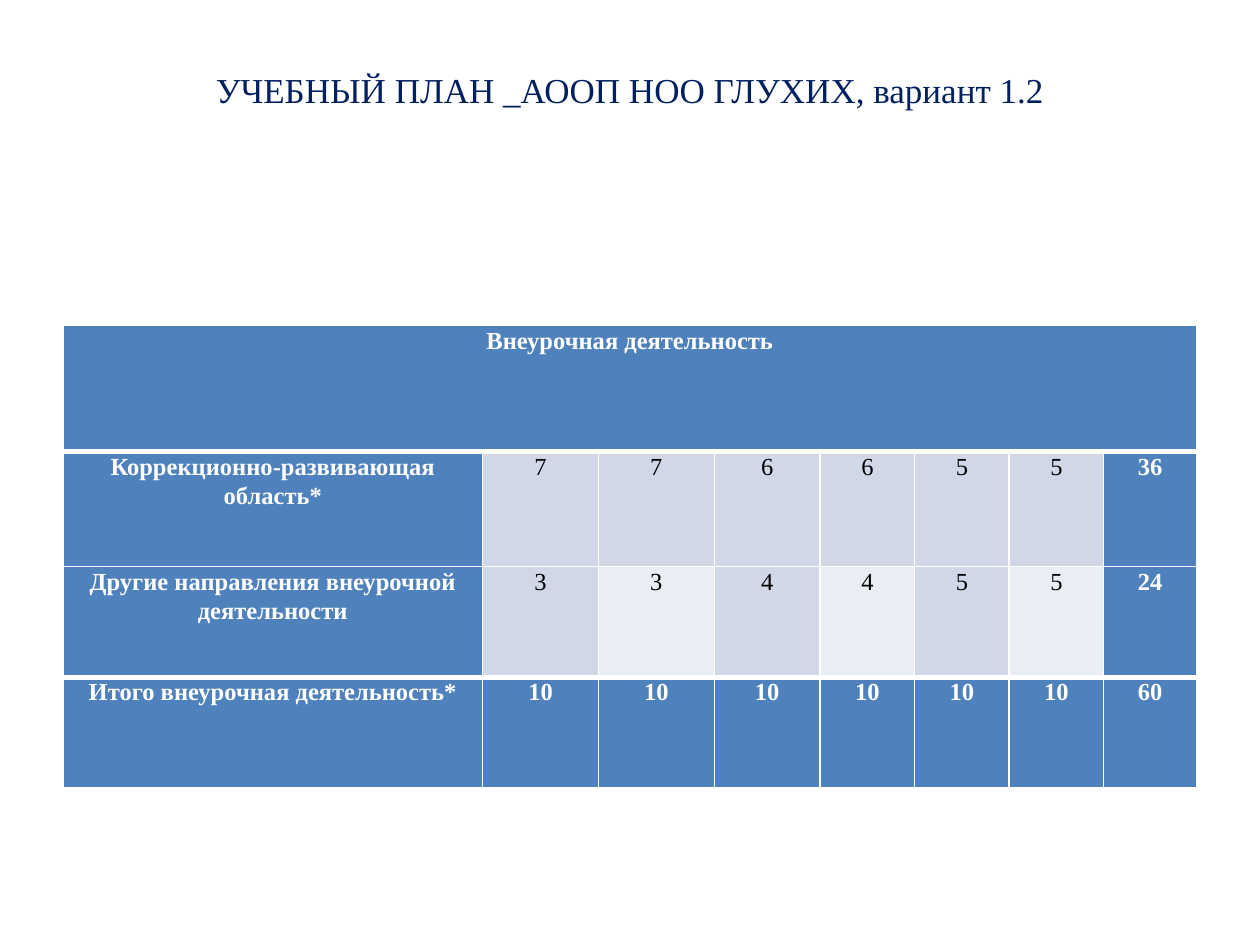
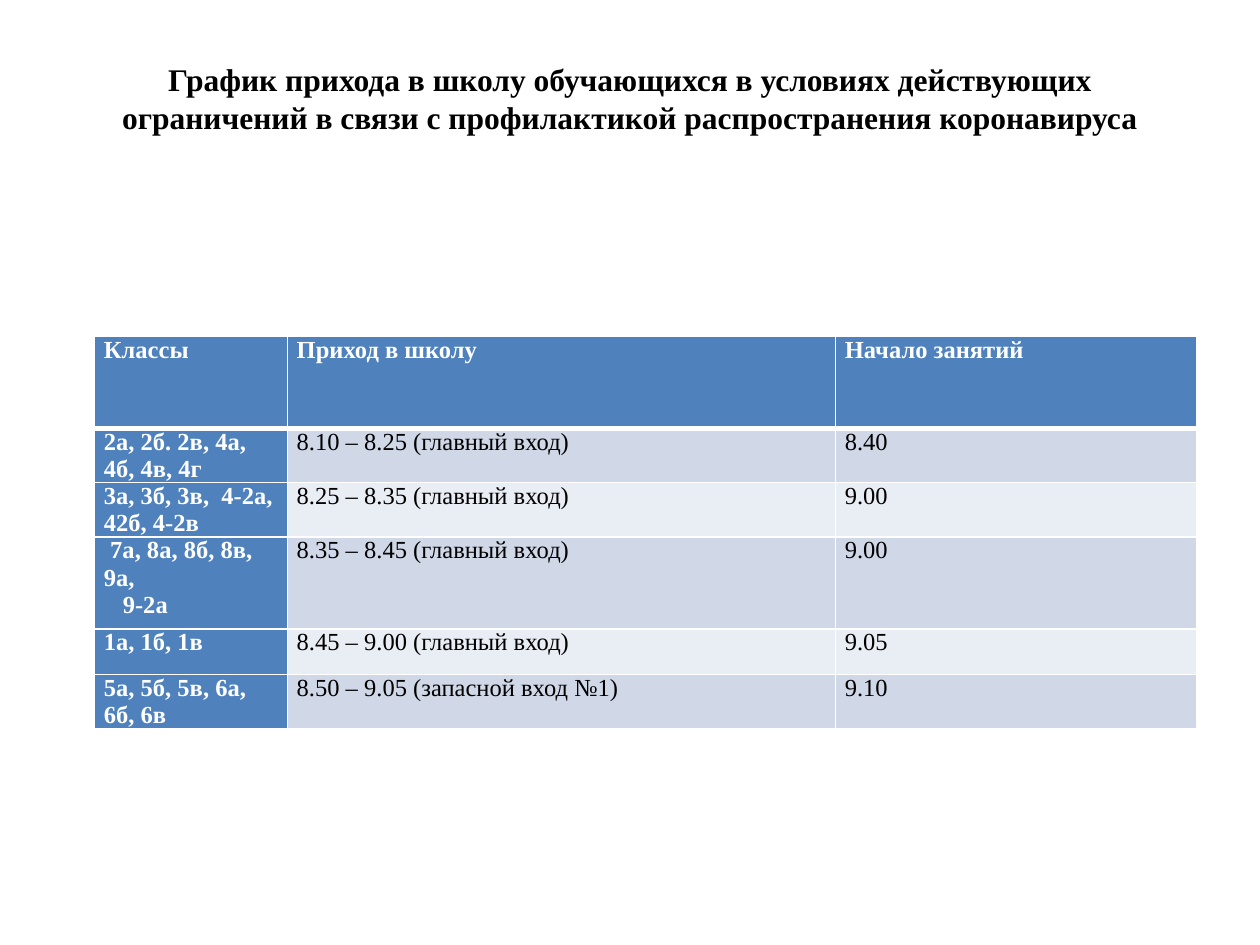
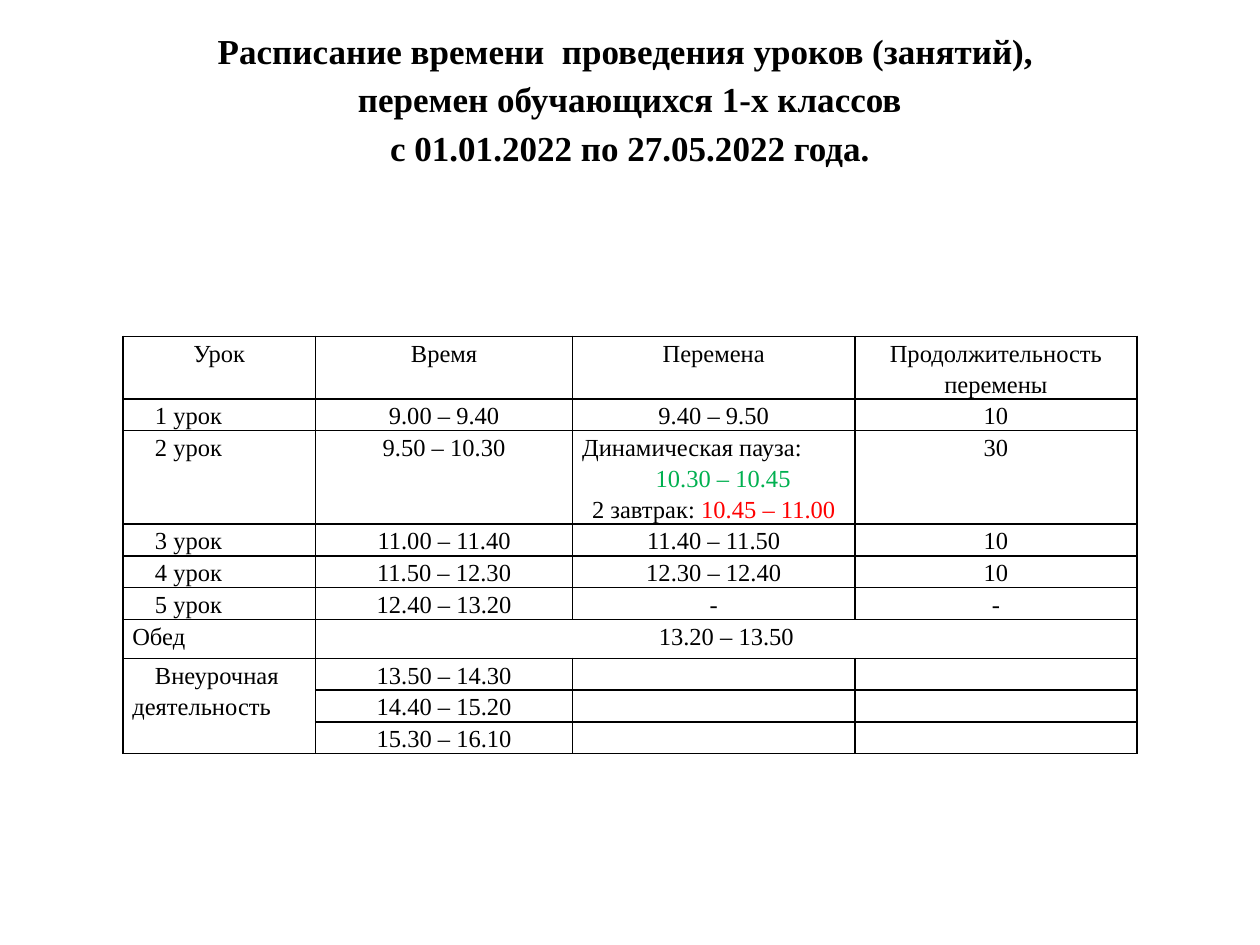
from lxml.etree import SubElement
from pptx import Presentation
from pptx.dml.color import RGBColor
from pptx.enum.text import MSO_ANCHOR as Anchor, PP_ALIGN as Align
from pptx.oxml.ns import qn
from pptx.util import Inches, Pt

WHITE = RGBColor(0xFF, 0xFF, 0xFF)
BLACK = RGBColor(0x00, 0x00, 0x00)
NAVY = RGBColor(0x00, 0x20, 0x60)
BLUE = RGBColor(0x4F, 0x81, 0xBD)
BAND = RGBColor(0xD0, 0xD8, 0xE8)
PALE = RGBColor(0xE9, 0xED, 0xF4)
GREEN = RGBColor(0x00, 0xB0, 0x50)
RED = RGBColor(0xFF, 0x00, 0x00)

FONT = "Times New Roman"
GRID_COLUMNS, GRID_ROWS = 100, 75


def indent_first_line(paragraph, indent):
    properties = paragraph._p.get_or_add_pPr()
    properties.set("marL", "0")
    properties.set("indent", str(indent))


def write(paragraph, text, size=14, color=BLACK, bold=False,
          align=Align.LEFT, spacing=1.0, indent=0):
    paragraph.alignment = align
    paragraph.line_spacing = spacing
    if indent:
        indent_first_line(paragraph, indent)
    if not text:
        paragraph._p.get_or_add_endParaRPr().set("sz", str(size * 100))
        return
    run = paragraph.add_run()
    run.text = text
    run.font.name = FONT
    run.font.size = Pt(size)
    run.font.bold = bold
    run.font.color.rgb = color


class Deck:
    def __init__(self):
        self.presentation = Presentation()
        self.presentation.slide_width = Inches(10)
        self.presentation.slide_height = Inches(7.5)
        self.slide = None

    def across(self, columns):
        return round(self.presentation.slide_width * columns / GRID_COLUMNS)

    def down(self, rows):
        return round(self.presentation.slide_height * rows / GRID_ROWS)

    def new_slide(self):
        layout = self.presentation.slide_layouts[6]
        self.slide = self.presentation.slides.add_slide(layout)

    def title(self, text, top=3, bottom_inset=0.5, **text_format):
        box = self.slide.shapes.add_textbox(
            self.across(5), self.down(top), self.across(90), self.down(12.5))
        frame = box.text_frame
        frame.word_wrap = True
        frame.vertical_anchor = Anchor.MIDDLE
        frame.margin_bottom = self.down(bottom_inset)
        self.lines(frame, text, align=Align.CENTER, **text_format)

    def lines(self, frame, text, **text_format):
        for index, line in enumerate(text.split("\n")):
            paragraph = frame.add_paragraph() if index else frame.paragraphs[0]
            write(paragraph, line, **text_format)

    def borders(self, cell, color, top, bottom):
        properties = cell._tc.get_or_add_tcPr()
        for side, width in (("L", 1), ("R", 1), ("T", top), ("B", bottom)):
            line = SubElement(properties, qn(f"a:ln{side}"), w=str(Pt(width)))
            fill = SubElement(line, qn("a:solidFill"))
            SubElement(fill, qn("a:srgbClr"), val=str(color))

    def table(self, left, top, widths, heights, rows, cell_style,
              line_color=WHITE, thick_edges=()):
        table = self.slide.shapes.add_table(
            len(heights), len(widths), self.across(left), self.down(top),
            self.across(sum(widths)), self.down(sum(heights))).table
        table.first_row = table.horz_banding = False
        for column, width in zip(table.columns, widths):
            column.width = self.across(width)
        for row, height in zip(table.rows, heights):
            row.height = self.down(height)
        for r, texts in enumerate(rows):
            top_line, bottom_line = (3 if edge in thick_edges else 1
                                     for edge in (r, r + 1))
            for c in range(len(widths)):
                cell = table.cell(r, c)
                cell.margin_left = cell.margin_right = self.across(0.75)
                cell.margin_top = cell.margin_bottom = 0
                self.borders(cell, line_color, top_line, bottom_line)
                fill, text_format = cell_style(r, c)
                if fill is None:
                    cell.fill.background()
                else:
                    cell.fill.solid()
                    cell.fill.fore_color.rgb = fill
                text = texts[c] if c < len(texts) else ""
                self.lines(cell.text_frame, text, **text_format)
        return table


def curriculum_slide(deck):
    deck.new_slide()
    deck.title("УЧЕБНЫЙ ПЛАН _АООП НОО ГЛУХИХ, вариант 1.2",
               top=0.85, size=20, color=NAVY)
    rows = [
        ["Внеурочная деятельность"],
        ["Коррекционно-развивающая область*", *"776655", "36"],
        ["Другие направления внеурочной деятельности", *"334455", "24"],
        ["Итого внеурочная деятельность*", *["10"] * 6, "60"],
    ]

    def cell_style(r, c):
        centred = {"align": Align.CENTER, "spacing": 1.07}
        if r in (0, 3) or c in (0, 7):
            return BLUE, {"color": WHITE, "bold": True, **centred}
        return (PALE if r == 2 and c % 2 == 0 else BAND), centred

    table = deck.table(5, 25.85, [33.3, 9.2, 9.2, 8.4, 7.5, 7.5, 7.5, 7.4],
                       [10, 9.1, 8.8, 8.8], rows, cell_style,
                       thick_edges=(1, 3))
    table.cell(0, 0).merge(table.cell(0, 7))


def arrival_slide(deck):
    deck.new_slide()
    deck.title("График прихода в школу обучающихся в условиях действующих "
               "ограничений в связи с профилактикой распространения "
               "коронавируса", bottom_inset=3.4, size=18, bold=True)
    rows = [
        ["Классы", "Приход в школу", "Начало занятий"],
        ["2а, 2б. 2в, 4а, 4б, 4в, 4г", "8.10 – 8.25 (главный вход)", "8.40"],
        ["3а, 3б, 3в,  4-2а, 42б, 4-2в", "8.25 – 8.35 (главный вход)", "9.00"],
        ["7а, 8а, 8б, 8в, 9а,\n9-2а", "8.35 – 8.45 (главный вход)", "9.00"],
        ["1а, 1б, 1в", "8.45 – 9.00 (главный вход)", "9.05"],
        ["5а, 5б, 5в, 6а, 6б, 6в", "8.50 – 9.05 (запасной вход №1)", "9.10"],
    ]

    def cell_style(r, c):
        spacing = {"spacing": Pt(15.5)}
        if r == 0 or c == 0:
            return BLUE, {"color": WHITE, "bold": True, **spacing}
        return (BAND if r % 2 else PALE), spacing

    table = deck.table(7.5, 26.7, [15.3, 43.5, 28.7],
                       [7.3, 4.31, 4.31, 7.3, 3.6, 4.31], rows, cell_style,
                       thick_edges=(1,))
    senior_classes = table.cell(3, 0).text_frame.paragraphs
    for paragraph, indent in zip(senior_classes, (0.5, 1.5)):
        indent_first_line(paragraph, deck.across(indent))


def lessons_slide(deck):
    deck.new_slide()
    deck.title("Расписание времени  проведения уроков (занятий), \n"
               "перемен обучающихся 1-х классов\n"
               "с 01.01.2022 по 27.05.2022 года.",
               bottom_inset=3.8, size=20, bold=True, spacing=1.15)
    rows = [
        ["Урок", "Время", "Перемена", "Продолжительность перемены"],
        ["1 урок", "9.00 – 9.40", "9.40 – 9.50", "10"],
        ["2 урок", "9.50 – 10.30", "", "30"],
        ["3 урок", "11.00 – 11.40", "11.40 – 11.50", "10"],
        ["4 урок", "11.50 – 12.30", "12.30 – 12.40", "10"],
        ["5 урок", "12.40 – 13.20", "-", "-"],
        ["Обед", "13.20 – 13.50"],
        ["Внеурочная деятельность", "13.50 – 14.30"],
        ["", "14.40 – 15.20"],
        ["", "15.30 – 16.10"],
    ]
    lunch_row, activity_row = 6, 7
    spaced = {"spacing": Pt(17.8)}
    centred = {"align": Align.CENTER, **spaced}

    def cell_style(r, c):
        if r == 0 or c > 0:
            return None, centred
        indent = 0 if r == lunch_row else deck.across(1.8)
        return None, {"indent": indent, **spaced}

    lesson_height = 2.52
    table = deck.table(9.75, 26.7, [15.3, 20.4, 22.4, 22.4],
                       [4.95, lesson_height, 7.42, *[lesson_height] * 3,
                        3.1, *[lesson_height] * 3],
                       rows, cell_style, line_color=BLACK)
    table.cell(lunch_row, 1).merge(table.cell(lunch_row, 3))
    table.cell(activity_row, 0).merge(table.cell(activity_row + 2, 0))

    frame = table.cell(2, 2).text_frame
    write(frame.paragraphs[0], "Динамическая пауза:", **spaced)
    write(frame.add_paragraph(), "10.30 – 10.45", color=GREEN,
          indent=deck.across(1.5), **centred)
    breakfast = frame.add_paragraph()
    write(breakfast, "2 завтрак:", **centred)
    write(breakfast, " 10.45 – 11.00", color=RED, **centred)


def main():
    deck = Deck()
    curriculum_slide(deck)
    arrival_slide(deck)
    lessons_slide(deck)
    deck.presentation.save("out.pptx")


if __name__ == "__main__":
    main()
